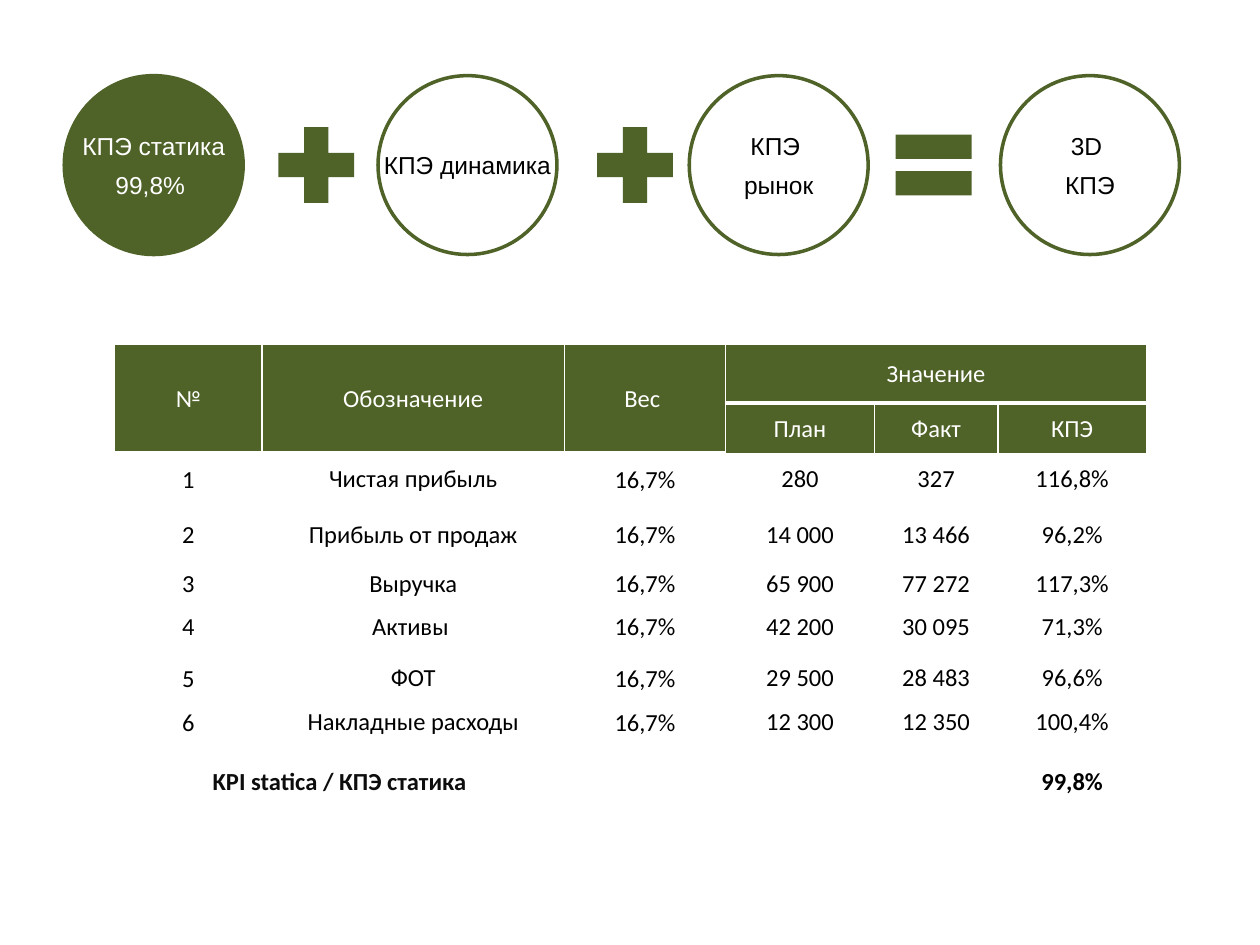
from dataclasses import dataclass

from lxml.etree import SubElement
from pptx import Presentation
from pptx.dml.color import RGBColor
from pptx.enum.shapes import MSO_SHAPE as Shape
from pptx.enum.text import MSO_ANCHOR as Anchor, PP_ALIGN as Align
from pptx.oxml.ns import qn
from pptx.util import Inches, Pt

GREEN = RGBColor(0x4F, 0x62, 0x28)
WHITE = RGBColor(0xFF, 0xFF, 0xFF)
BLACK = RGBColor(0x00, 0x00, 0x00)
DARK = RGBColor(0x0D, 0x0D, 0x0D)

CIRCLE_TOP, CIRCLE_SIZE = 0.6, 1.42
SIGN_TOP, SIGN_SIZE = 0.9, 0.82
COLUMN_WIDTHS = [1.17, 2.4, 1.28, 1.18, 0.98, 1.18]
ROW_HEIGHTS = [0.47, 0.4, 0.41, 0.47, 0.31, 0.37, 0.45, 0.17, 0.69]
HEADER_ROWS = 2
TALL_COLUMNS = 3  # header cells that span both header rows


@dataclass
class Circle:
    left: float
    text: str
    fill: RGBColor = WHITE
    color: RGBColor = BLACK


@dataclass
class Sign:
    left: float
    kind: Shape


@dataclass
class Indicator:
    name: str
    plan: str
    fact: str
    result: str
    weight: str = "16,7%"


CIRCLES = [
    Circle(0.51, "КПЭ статика\n99,8% ", GREEN, WHITE),
    Circle(3.0, "КПЭ динамика"),
    Circle(5.47, "КПЭ \nрынок"),
    Circle(7.94, "3D \nКПЭ"),
]
SIGNS = [
    Sign(2.1, Shape.MATH_PLUS),
    Sign(4.63, Shape.MATH_PLUS),
    Sign(7.0, Shape.MATH_EQUAL),
]
INDICATORS = [
    Indicator("Чистая прибыль", "280", "327", "116,8%"),
    Indicator("Прибыль от продаж", "14 000", "13 466", "96,2%"),
    Indicator("Выручка", "65 900", "77 272", "117,3%"),
    Indicator("Активы ", "42 200", "30 095", "71,3%"),
    Indicator("ФОТ", "29 500", "28 483", "96,6%"),
    Indicator("Накладные расходы", "12 300", "12 350", "100,4%"),
]


def format_text(frame, font: str, color: RGBColor, bold: bool = False, after: float = 0) -> None:
    for para in frame.paragraphs:
        para.alignment = Align.CENTER
        para.space_after = Pt(after)
        for span in para.runs:
            span.font.name = font
            span.font.size = Pt(14)
            span.font.bold = bold
            span.font.color.rgb = color


def add_figure(page, kind: Shape, left: float, top: float, size: float, fill: RGBColor):
    figure = page.shapes.add_shape(kind, Inches(left), Inches(top), Inches(size), Inches(size))
    figure.shadow.inherit = False
    figure.fill.solid()
    figure.fill.fore_color.rgb = fill
    figure.line.fill.background()
    return figure


def add_circle(page, circle: Circle) -> None:
    figure = add_figure(page, Shape.OVAL, circle.left, CIRCLE_TOP, CIRCLE_SIZE, circle.fill)
    figure.line.color.rgb = GREEN
    figure.line.width = Pt(2)
    # The label uses the full width of the circle
    box = page.shapes.add_textbox(figure.left, figure.top, figure.width, figure.height)
    frame = box.text_frame
    frame.word_wrap = True
    frame.vertical_anchor = Anchor.MIDDLE
    frame.margin_left = frame.margin_right = Inches(0.02)
    frame.margin_top = frame.margin_bottom = Inches(0.02)
    frame.text = circle.text
    format_text(frame, "Arial", circle.color, after=5.6)


def set_borders(cell, top: float, bottom: float) -> None:
    properties = cell._tc.get_or_add_tcPr()
    widths = {"a:lnL": 1, "a:lnR": 1, "a:lnT": top, "a:lnB": bottom}
    for tag, width in widths.items():
        line = SubElement(properties, qn(tag), w=str(Pt(width)))
        fill = SubElement(line, qn("a:solidFill"))
        SubElement(fill, qn("a:srgbClr"), val=str(WHITE))


def style_cell(cell, row: int, column: int) -> None:
    header = row < HEADER_ROWS
    total = row == len(ROW_HEIGHTS) - 1
    tall = column < TALL_COLUMNS
    set_borders(
        cell,
        top=3 if row == 1 or (row == 2 and tall) else 1,
        bottom=3 if row == 0 or (row == 1 and tall) else 1,
    )
    if header:
        cell.fill.solid()
        cell.fill.fore_color.rgb = GREEN
    else:
        cell.fill.background()
    cell.vertical_anchor = Anchor.MIDDLE
    inset = Inches(0.01 if header or total or column in (0, 2) else 0)
    cell.margin_left = cell.margin_right = cell.margin_top = inset
    cell.margin_bottom = 0
    color = WHITE if header else DARK if total and column == 0 else BLACK
    format_text(cell.text_frame, "Calibri", color, bold=total)


def add_indicator_table(page) -> None:
    rows = [
        ["№", "Обозначение", "Вес ", "Значение", "", ""],
        ["", "", "", "План", "Факт", "КПЭ"],
    ]
    for number, item in enumerate(INDICATORS, start=1):
        rows.append([str(number), item.name, item.weight, item.plan, item.fact, item.result])
    rows.append(["KPI statica / КПЭ статика", "", "", "", "", "99,8%"])

    table = page.shapes.add_table(
        len(rows), len(COLUMN_WIDTHS), Inches(0.91), Inches(2.73),
        Inches(sum(COLUMN_WIDTHS)), Inches(sum(ROW_HEIGHTS)),
    ).table
    table.first_row = table.horz_banding = False
    for column, width in zip(table.columns, COLUMN_WIDTHS):
        column.width = Inches(width)
    for row, height in zip(table.rows, ROW_HEIGHTS):
        row.height = Inches(height)

    for r, texts in enumerate(rows):
        for c, text in enumerate(texts):
            cell = table.cell(r, c)
            if text:
                cell.text_frame.text = text
            style_cell(cell, r, c)

    # Merged header cells and the total label
    for c in range(TALL_COLUMNS):
        table.cell(0, c).merge(table.cell(1, c))
    table.cell(0, TALL_COLUMNS).merge(table.cell(0, len(COLUMN_WIDTHS) - 1))
    last = len(rows) - 1
    table.cell(last, 0).merge(table.cell(last, 1))


def main() -> None:
    deck = Presentation()
    deck.slide_width, deck.slide_height = Inches(10), Inches(7.5)
    page = deck.slides.add_slide(deck.slide_layouts[6])

    # Table of indicators
    add_indicator_table(page)

    # Formula of circles and signs
    for circle in CIRCLES:
        add_circle(page, circle)
    for sign in SIGNS:
        add_figure(page, sign.kind, sign.left, SIGN_TOP, SIGN_SIZE, GREEN)

    deck.save("out.pptx")


if __name__ == "__main__":
    main()
